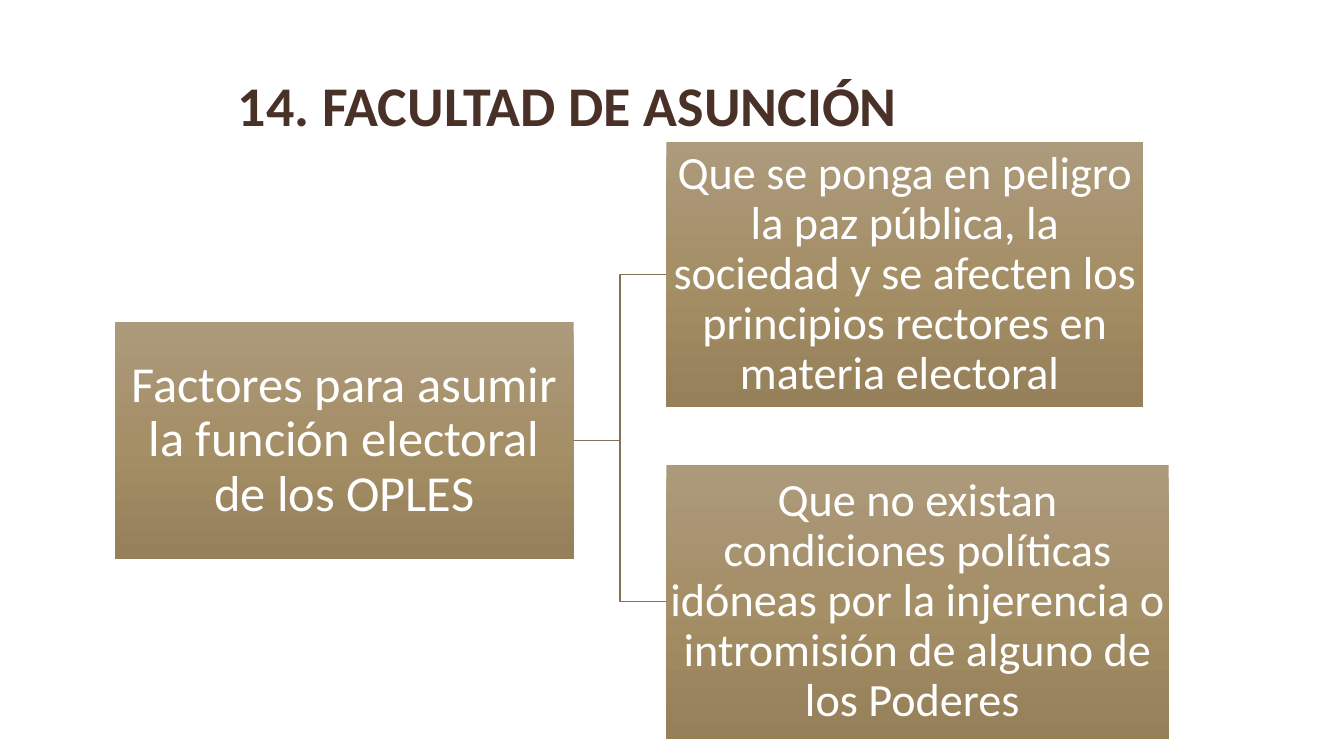
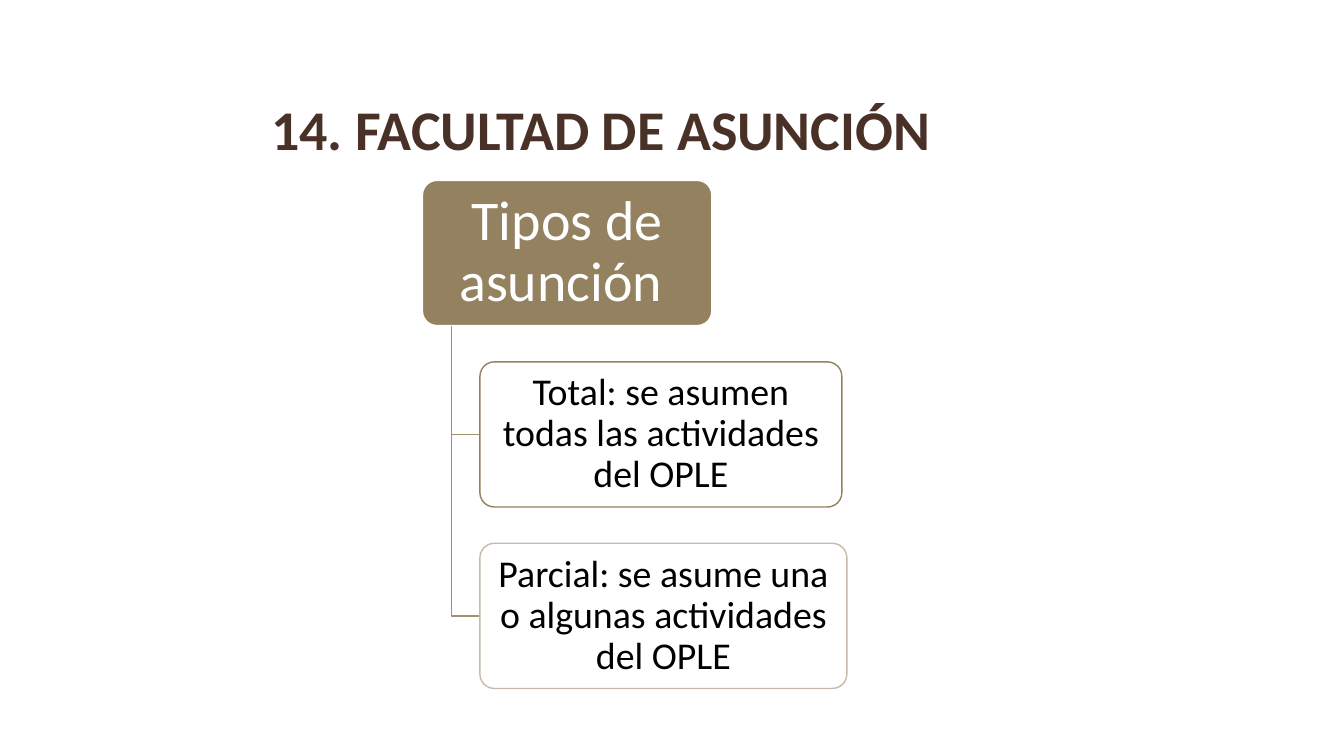
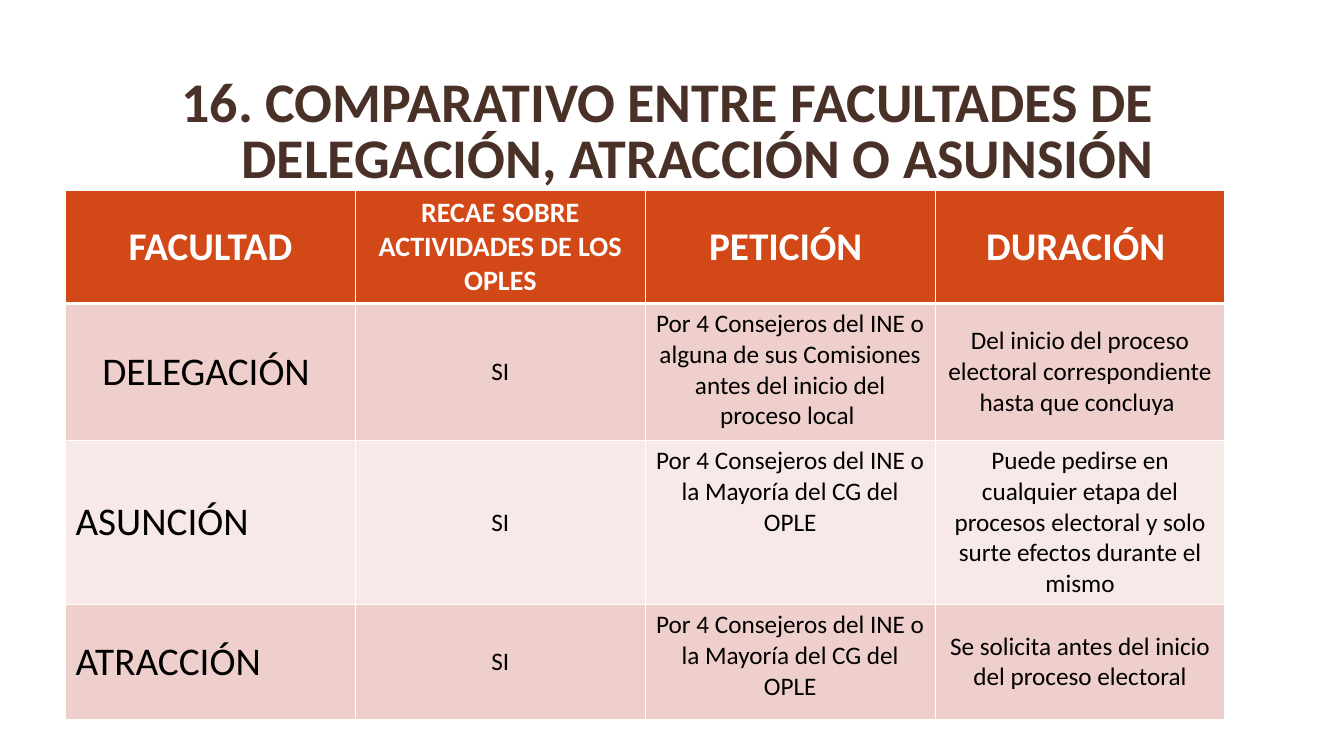
from copy import deepcopy

from lxml import etree
from pptx import Presentation
from pptx import util as u
from pptx.dml.color import RGBColor
from pptx.enum import shapes, text
from pptx.oxml.ns import qn

FONT = "Calibri"
WHITE = RGBColor(0xFF, 0xFF, 0xFF)
BLACK = RGBColor(0x00, 0x00, 0x00)
TITLE_BROWN = RGBColor(0x4A, 0x31, 0x28)
BRANCH_BROWN = RGBColor(0x82, 0x72, 0x55)
TRUNK_TAN = RGBColor(0xA3, 0x90, 0x6D)
BOX_BROWN = RGBColor(0x93, 0x81, 0x60)
PALE_TAN = RGBColor(0xC5, 0xBA, 0xAB)
HEADER_ORANGE = RGBColor(0xD3, 0x48, 0x17)
BANDS = RGBColor(0xEF, 0xCF, 0xCC), RGBColor(0xF7, 0xE9, 0xE8)
GRADIENT = (
    (0, RGBColor(0xAC, 0x9A, 0x7C)),
    (0.5, RGBColor(0xA5, 0x8F, 0x67)),
    (1, RGBColor(0x96, 0x80, 0x59)),
)

CENTER, LEFT, RIGHT = text.PP_ALIGN.CENTER, text.PP_ALIGN.LEFT, text.PP_ALIGN.RIGHT
TOP, MIDDLE = text.MSO_ANCHOR.TOP, text.MSO_ANCHOR.MIDDLE


# Shared parts
def inches(*lengths):
    return [u.Inches(length) for length in lengths]


def style_paragraph(para, size, color, bold=False, align=CENTER, spacing=None):
    para.alignment = align
    if spacing:
        para.line_spacing = spacing
    for span in para.runs:
        span.font.name = FONT
        span.font.size = u.Pt(size)
        span.font.bold = bold
        span.font.color.rgb = color


def add_page(deck, title, left=0.5, top=0.7, align=CENTER):
    page = deck.slides.add_slide(deck.slide_layouts[5])
    box = page.shapes.title
    box.left, box.top, box.width, box.height = inches(left, top, 11.04, 1.26)
    frame = box.text_frame
    frame.text = title
    frame.auto_size = text.MSO_AUTO_SIZE.NONE
    frame.vertical_anchor = MIDDLE
    style_paragraph(frame.paragraphs[0], 40, TITLE_BROWN, True, align, u.Pt(40))
    return page


def add_path(page, points, color):
    """Draw an open line through points given in inches."""
    start, *others = [tuple(inches(*point)) for point in points]
    builder = page.shapes.build_freeform(*start)
    builder.add_line_segments(others, close=False)
    path_line = builder.convert_to_shape()
    path_line.shadow.inherit = False
    path_line.fill.background()
    path_line.line.color.rgb = color
    path_line.line.width = u.Pt(1)


def add_box(page, kind, area, words, size, color, inset):
    box = page.shapes.add_shape(kind, *inches(*area))
    box.shadow.inherit = False
    frame = box.text_frame
    frame.word_wrap = True
    frame.vertical_anchor = MIDDLE
    frame.margin_left = frame.margin_right = u.Inches(inset[0])
    frame.margin_top = frame.margin_bottom = u.Inches(inset[1])
    frame.text = words
    style_paragraph(frame.paragraphs[0], size, color, spacing=0.9)
    return box


# Factors: one root box with two branches to its right
def add_gradient_box(page, area, words, size, inset):
    box = add_box(page, shapes.MSO_SHAPE.RECTANGLE, area, words, size, WHITE, (inset, inset))
    box.line.fill.background()
    box.fill.gradient()
    box.fill.gradient_angle = 270
    stop_list = box._element.spPr.find(".//" + qn("a:gsLst"))
    stop_list.insert(1, deepcopy(stop_list[0]))
    for stop, (position, color) in zip(box.fill.gradient_stops, GRADIENT):
        stop.position = position
        stop.color.rgb = color


def add_factor_tree(page, left, top, root, branches):
    root_width, root_height, root_top = 4.55, 2.36, top + 1.78
    root_right, root_middle = left + root_width, root_top + root_height / 2
    branch_left = left + 5.47
    bend = (root_right + branch_left) / 2
    add_gradient_box(page, (left, root_top, root_width, root_height), root, 36, 0.03)
    for offset, width, height, words in branches:
        middle = top + offset + height / 2
        add_path(page, [(root_right, root_middle), (bend, root_middle),
                        (bend, middle), (branch_left, middle)], BRANCH_BROWN)
        add_gradient_box(page, (branch_left, top + offset, width, height), words, 33, 0.02)


# Types: a heading box with children hanging from a trunk
def add_rounded_box(page, area, words, size, color, fill, line, inset):
    box = add_box(page, shapes.MSO_SHAPE.ROUNDED_RECTANGLE, area, words, size, color, inset)
    box.adjustments[0] = 0.1
    box.fill.solid()
    box.fill.fore_color.rgb = fill
    box.line.color.rgb = line
    box.line.width = u.Pt(1)
    return box


def add_type_tree(page, left, top, heading, children):
    height, step = 1.44, 1.8
    trunk, child_left = left + 0.29, left + 0.57
    add_rounded_box(page, (left, top, 2.87, height), heading, 40, WHITE,
                    BOX_BROWN, WHITE, (0.08, 0.06))
    for number, (width, words, line) in enumerate(children, start=1):
        child_top = top + number * step
        middle = child_top + height / 2
        add_path(page, [(trunk, top + height), (trunk, middle), (child_left, middle)], TRUNK_TAN)
        child = add_rounded_box(page, (child_left, child_top, width, height), words, 27,
                                BLACK, WHITE, line, (0.06, 0.04))
        fill_color = child._element.spPr.find(qn("a:solidFill"))[0]
        etree.SubElement(fill_color, qn("a:alpha"), val="90000")


# Comparison table
def set_borders(cell, top, bottom):
    properties = cell._tc.get_or_add_tcPr()
    widths = {"a:lnL": 1, "a:lnR": 1, "a:lnT": top, "a:lnB": bottom}
    for index, (side, width) in enumerate(widths.items()):
        border = etree.Element(qn(side), w=str(u.Pt(width)))
        solid = etree.SubElement(border, qn("a:solidFill"))
        etree.SubElement(solid, qn("a:srgbClr"), val=str(WHITE))
        properties.insert(index, border)


def add_comparison(page, left, top, width, heights, rows):
    """Each cell of rows holds its words, size, alignment and anchor."""
    columns = len(rows[0])
    table = page.shapes.add_table(
        len(rows), columns, *inches(left, top, width, sum(heights))).table
    for column in table.columns:
        column.width = u.Inches(width / columns)
    for row_number, row in enumerate(rows):
        header = row_number == 0
        table.rows[row_number].height = u.Inches(heights[row_number])
        for column_number, (words, size, align, anchor) in enumerate(row):
            cell = table.cell(row_number, column_number)
            cell.text = words
            cell.vertical_anchor = anchor
            cell.fill.solid()
            cell.fill.fore_color.rgb = HEADER_ORANGE if header else BANDS[(row_number - 1) % 2]
            style_paragraph(cell.text_frame.paragraphs[0], size,
                            WHITE if header else BLACK, header, align)
            set_borders(cell, 3 if row_number == 1 else 1, 3 if header else 1)


def main():
    deck = Presentation()
    deck.slide_width, deck.slide_height = inches(13.33, 7.5)

    page = add_page(deck, "14. FACULTAD DE ASUNCIÓN ", left=0.17, top=0.46)
    add_factor_tree(
        page, 1.14, 1.41, "Factores para asumir la función electoral de los OPLES",
        [(0, 4.73, 2.63, "Que se ponga en peligro la paz pública, la sociedad y se afecten "
                         "los principios rectores en materia electoral "),
         (3.2, 4.98, 2.72, "Que no existan condiciones políticas idóneas por la injerencia "
                           "o intromisión de alguno de los Poderes ")])

    page = add_page(deck, "14. FACULTAD DE ASUNCIÓN ")
    add_type_tree(
        page, 4.19, 1.79, "Tipos de asunción ",
        [(3.59, "Total: se asumen todas las actividades del OPLE", BOX_BROWN),
         (3.64, "Parcial: se asume una o algunas actividades del OPLE", PALE_TAN)])

    page = add_page(
        deck, "16. COMPARATIVO ENTRE FACULTADES DE DELEGACIÓN, ATRACCIÓN O ASUNSIÓN",
        align=RIGHT)
    applies = ("SI", 18, CENTER, MIDDLE)
    majority = ("Por 4 Consejeros del INE o la Mayoría del CG del OPLE", 18, CENTER, TOP)
    add_comparison(page, 0.65, 1.89, 11.5, (1.11, 1.36, 1.62, 1.14), [
        [("FACULTAD", 28, CENTER, MIDDLE),
         ("RECAE SOBRE ACTIVIDADES DE LOS OPLES", 20, CENTER, TOP),
         ("PETICIÓN ", 28, CENTER, MIDDLE),
         ("DURACIÓN ", 28, CENTER, MIDDLE)],
        [("DELEGACIÓN ", 28, CENTER, MIDDLE), applies,
         ("Por 4 Consejeros del INE o alguna de sus Comisiones antes del inicio "
          "del proceso local ", 18, CENTER, TOP),
         ("Del inicio del proceso electoral correspondiente hasta que concluya ",
          18, CENTER, MIDDLE)],
        [("ASUNCIÓN", 28, LEFT, MIDDLE), applies, majority,
         ("Puede pedirse en cualquier etapa del procesos electoral y solo surte "
          "efectos durante el mismo", 18, CENTER, TOP)],
        [("ATRACCIÓN", 28, LEFT, MIDDLE), applies, majority,
         ("Se solicita antes del inicio del proceso electoral", 18, CENTER, MIDDLE)],
    ])

    deck.save("out.pptx")


if __name__ == "__main__":
    main()
